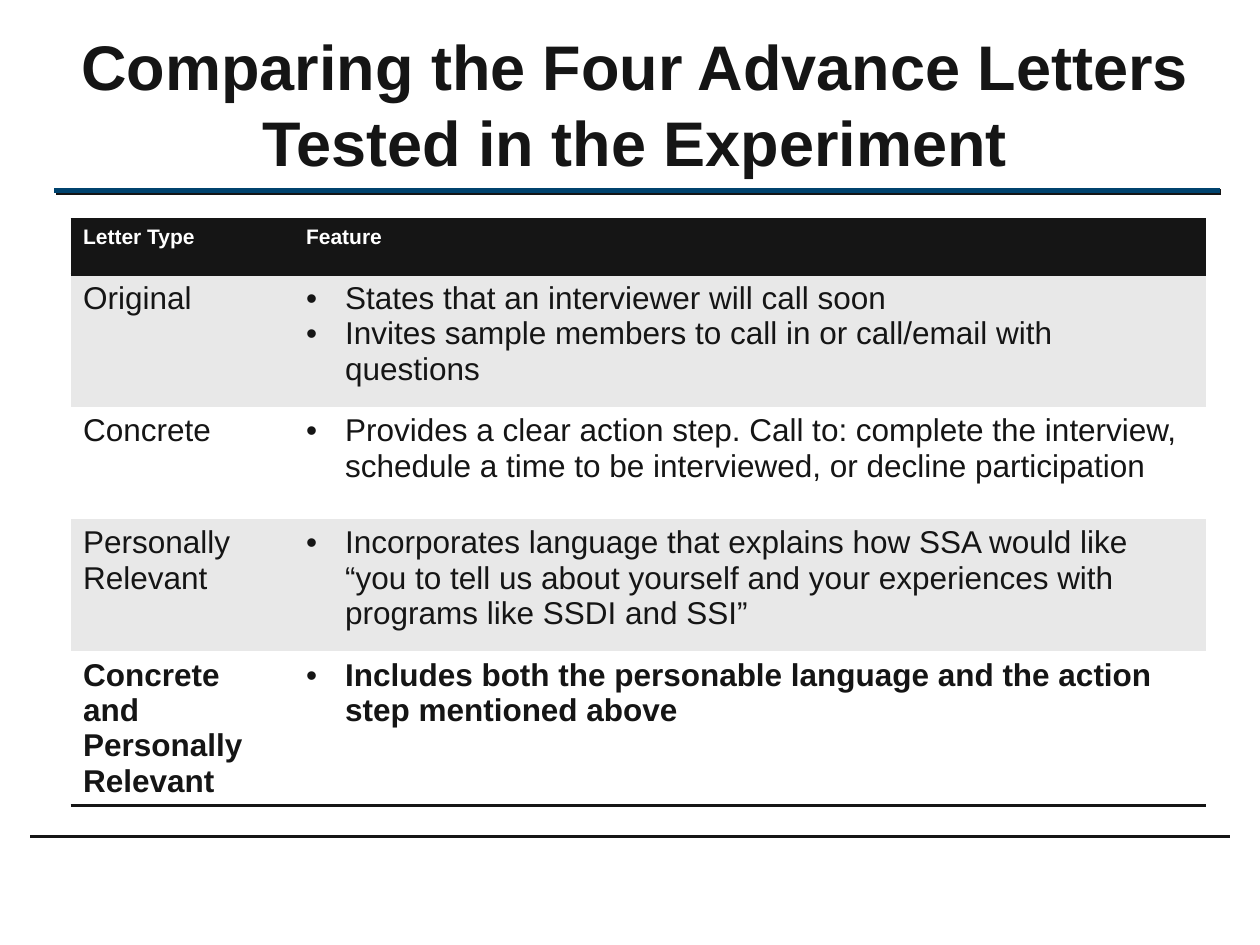
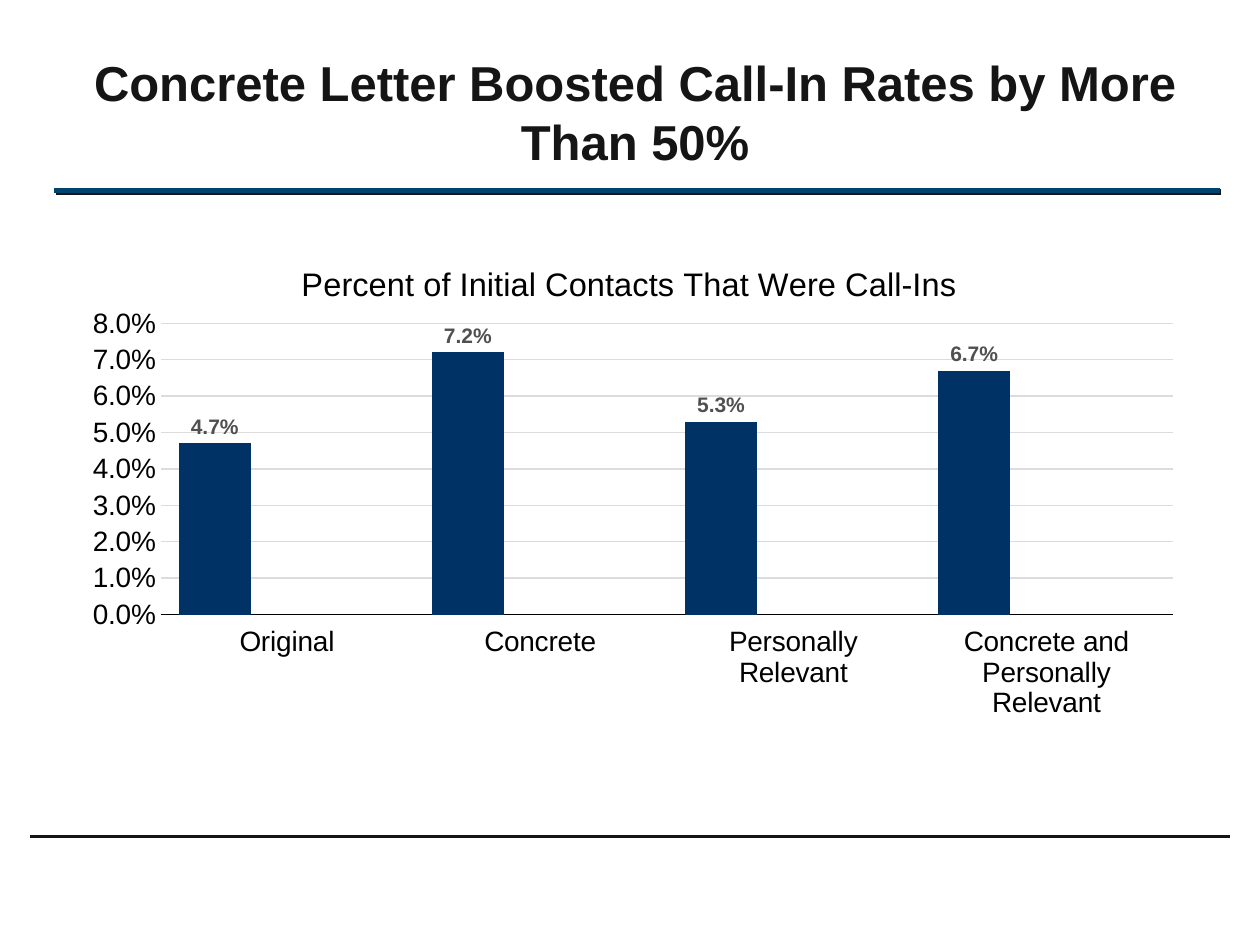
import dataclasses
import typing

import lxml.etree
import pptx
import pptx.chart.data
import pptx.dml.color
import pptx.enum.chart
import pptx.enum.shapes
import pptx.enum.text
import pptx.oxml
import pptx.oxml.ns
import pptx.util

Inches = pptx.util.Inches
Pt = pptx.util.Pt
qn = pptx.oxml.ns.qn


@dataclasses.dataclass(frozen=True)
class Theme:
    font: str = "Arial"
    ink: str = "151515"
    white: str = "FFFFFF"
    band: str = "E8E8E8"
    rule: str = "00436E"
    black: str = "000000"
    grid: str = "DCDCDC"
    label: str = "505050"
    series: tuple[str, ...] = ("003266", "E7E7E7", "A5A5A5")
    small: int = 12
    axis: int = 16
    body: int = 18


@dataclasses.dataclass(frozen=True)
class Rule:
    left: float
    right: float
    y: float
    color: str
    weight: float
    shadow: bool = False


@dataclasses.dataclass(frozen=True)
class Letter:
    name: str
    features: tuple[str, ...]
    height: float
    bold: bool = False


THEME = Theme()
RULES = (
    Rule(0.43, 9.68, 1.51, THEME.rule, 3, shadow=True),
    Rule(0.24, 9.76, 6.64, THEME.ink, 1.5),
)
LETTERS = (
    Letter("Original", (
        "States that an interviewer will call soon",
        "Invites sample members to call in or call/email with questions"), 1.05),
    Letter("Concrete", (
        "Provides a clear action step. Call to: complete the interview, "
        "schedule a time to be interviewed, or decline participation",), 0.89),
    Letter("Personally Relevant", (
        "Incorporates language that explains how SSA would like “you to tell us about "
        "yourself and your experiences with programs like SSDI and SSI”",), 1.05),
    Letter("Concrete and Personally Relevant", (
        "Includes both the personable language and the action step mentioned above",),
        1.05, bold=True),
)
CALL_IN_RATES = (0.047, 0.072, 0.053, 0.067)
PLAIN_TABLE = "{2D5ABB26-0587-4C30-8999-92F81FD0307C}"


def rgb(color: str) -> pptx.dml.color.RGBColor:
    return pptx.dml.color.RGBColor.from_string(color)


def style_font(font: typing.Any, size: float, color: str, bold: bool = False) -> None:
    font.name = THEME.font
    font.size = Pt(size)
    font.bold = bold
    font.color.rgb = rgb(color)


def add_text(tf: typing.Any, text: str, *, size: float, color: str = THEME.ink,
             bold: bool = False, bullet: bool = False, first: bool = True) -> typing.Any:
    """Write one paragraph into a text frame."""
    p = tf.paragraphs[0] if first else tf.add_paragraph()
    if bullet:
        pPr = p._p.get_or_add_pPr()
        pPr.set("marL", str(Inches(0.31)))
        pPr.set("indent", str(-Inches(0.31)))
        lxml.etree.SubElement(pPr, qn("a:buFont"), typeface=THEME.font)
        lxml.etree.SubElement(pPr, qn("a:buChar"), char="•")
    r = p.add_run()
    r.text = text
    style_font(r.font, size, color, bold)
    return p


# Shared frame: title and rules
def add_rule(slide: typing.Any, rule: Rule) -> None:
    line = slide.shapes.add_connector(
        pptx.enum.shapes.MSO_CONNECTOR.STRAIGHT,
        Inches(rule.left), Inches(rule.y), Inches(rule.right), Inches(rule.y))
    line.line.color.rgb = rgb(rule.color)
    line.line.width = Pt(rule.weight)
    effects = lxml.etree.SubElement(line._element.spPr, qn("a:effectLst"))
    if rule.shadow:
        shadow = lxml.etree.SubElement(effects, qn("a:outerShdw"), blurRad="0",
                                       dist=str(Pt(1.4)), dir="2700000")
        lxml.etree.SubElement(shadow, qn("a:srgbClr"), val=THEME.ink)


def add_slide(prs: typing.Any, title: str, top: float, size: float) -> typing.Any:
    slide = prs.slides.add_slide(prs.slide_layouts.get_by_name("Title Only"))
    for rule in RULES:
        add_rule(slide, rule)
    sp = slide.shapes.title
    sp.left, sp.top, sp.width, sp.height = map(Inches, (0.42, top, 9.24, 1.25))
    tf = sp.text_frame
    tf.word_wrap = True
    tf.auto_size = pptx.enum.text.MSO_AUTO_SIZE.NONE
    tf.vertical_anchor = pptx.enum.text.MSO_ANCHOR.BOTTOM
    p = add_text(tf, title, size=size, bold=True)
    p.alignment = pptx.enum.text.PP_ALIGN.CENTER
    return slide


# Table of letters
def fill_cell(cell: typing.Any, color: str, borders: tuple[str, ...] = ()) -> None:
    cell.fill.solid()
    cell.fill.fore_color.rgb = rgb(color)
    tcPr = cell._tc.get_or_add_tcPr()
    for i, side in enumerate(borders):
        ln = pptx.oxml.parse_xml(
            f'<a:{side} {pptx.oxml.ns.nsdecls("a")} w="{Pt(2)}"><a:solidFill>'
            f'<a:srgbClr val="{THEME.ink}"/></a:solidFill></a:{side}>')
        tcPr.insert(i, ln)


def add_letter_table(slide: typing.Any) -> None:
    table = slide.shapes.add_table(
        len(LETTERS) + 1, 2, Inches(0.56), Inches(1.74), Inches(9.01), Inches(4.47)).table
    table._tbl.tblPr.find(qn("a:tableStyleId")).text = PLAIN_TABLE
    table.horz_banding = False
    for column, width in zip(table.columns, (1.77, 7.24)):
        column.width = Inches(width)
    for row, height in zip(table.rows, (0.44, *(letter.height for letter in LETTERS))):
        row.height = Inches(height)

    for cell, heading in zip(table.rows[0].cells, ("Letter Type", "Feature")):
        add_text(cell.text_frame, heading, size=THEME.small, color=THEME.white, bold=True)
        fill_cell(cell, THEME.ink, ("lnT", "lnB"))

    for i, letter in enumerate(LETTERS, start=1):
        name, features = table.rows[i].cells
        add_text(name.text_frame, letter.name, size=THEME.body, bold=letter.bold)
        for j, feature in enumerate(letter.features):
            add_text(features.text_frame, feature, size=THEME.body, bold=letter.bold,
                     bullet=True, first=j == 0)
        for cell in (name, features):
            fill_cell(cell, THEME.band if i % 2 else THEME.white,
                      ("lnB",) if i == len(LETTERS) else ())


# Chart of call-in rates
def place(part: typing.Any, after: typing.Optional[str], **box: float) -> None:
    """Set a manual layout, as fractions of the chart, on a title or plot area."""
    for old in part.findall(qn("c:layout")):
        part.remove(old)
    layout = lxml.etree.Element(qn("c:layout"))
    manual = lxml.etree.SubElement(layout, qn("c:manualLayout"))
    if "w" in box:
        lxml.etree.SubElement(manual, qn("c:layoutTarget"), val="inner")
    for axis in "xy":
        lxml.etree.SubElement(manual, qn(f"c:{axis}Mode"), val="edge")
    for key, value in box.items():
        lxml.etree.SubElement(manual, qn(f"c:{key}"), val=str(value))
    if after:
        part.find(qn(after)).addnext(layout)
    else:
        part.insert(0, layout)


def add_rate_chart(slide: typing.Any) -> None:
    enum = pptx.enum.chart
    data = pptx.chart.data.CategoryChartData(number_format="0.0%")
    data.categories = [letter.name for letter in LETTERS]
    data.add_series("Series 1", CALL_IN_RATES)
    for name in ("Series 2", "Series 3"):
        data.add_series(name, [None] * len(LETTERS))
    chart = slide.shapes.add_chart(
        enum.XL_CHART_TYPE.COLUMN_CLUSTERED, Inches(0.56), Inches(1.84),
        Inches(8.93), Inches(3.92), data).chart
    style_font(chart.font, 10, THEME.ink)
    chart.has_legend = False
    chart.has_title = True
    add_text(chart.chart_title.text_frame, "Percent of Initial Contacts That Were Call-Ins",
             size=18.6, color=THEME.black)
    place(chart.chart_title._element, "c:tx", x=0.2, y=0.05)
    place(chart._chartSpace.chart.plotArea, None, x=0.08, y=0.185, w=0.9, h=0.59)

    plot = chart.plots[0]
    plot.gap_width = 50
    plot.overlap = 0
    plot.vary_by_categories = False
    for i, (series, color) in enumerate(zip(plot.series, THEME.series)):
        series.format.fill.solid()
        series.format.fill.fore_color.rgb = rgb(color)
        labels = series.data_labels
        labels.show_value = True
        labels.position = enum.XL_LABEL_POSITION.OUTSIDE_END
        labels.number_format = "0.0%"
        labels.number_format_is_linked = False
        style_font(labels.font, THEME.small, THEME.label, bold=i == 0)

    for axis in (chart.category_axis, chart.value_axis):
        axis.major_tick_mark = axis.minor_tick_mark = enum.XL_TICK_MARK.NONE
        style_font(axis.tick_labels.font, THEME.axis, THEME.black)
    cats, rates = chart.category_axis, chart.value_axis
    cats.tick_label_position = enum.XL_TICK_LABEL_POSITION.LOW
    cats.format.line.color.rgb = rgb(THEME.black)
    cats.format.line.width = Pt(0.75)
    rates.minimum_scale, rates.maximum_scale, rates.major_unit = 0, 0.08, 0.01
    rates.tick_labels.number_format = "0.0%"
    rates.tick_labels.number_format_is_linked = False
    rates.format.line.fill.background()
    rates.major_gridlines.format.line.color.rgb = rgb(THEME.grid)
    rates.major_gridlines.format.line.width = Pt(0.75)


def main() -> None:
    prs = pptx.Presentation()
    prs.slide_width, prs.slide_height = Inches(10), Inches(7.5)
    add_letter_table(add_slide(
        prs, "Comparing the Four Advance Letters Tested in the Experiment", top=0.22, size=36))
    add_rate_chart(add_slide(
        prs, "Concrete Letter Boosted Call-In Rates by More Than 50%", top=0.15, size=28))
    prs.save("out.pptx")


if __name__ == "__main__":
    main()
